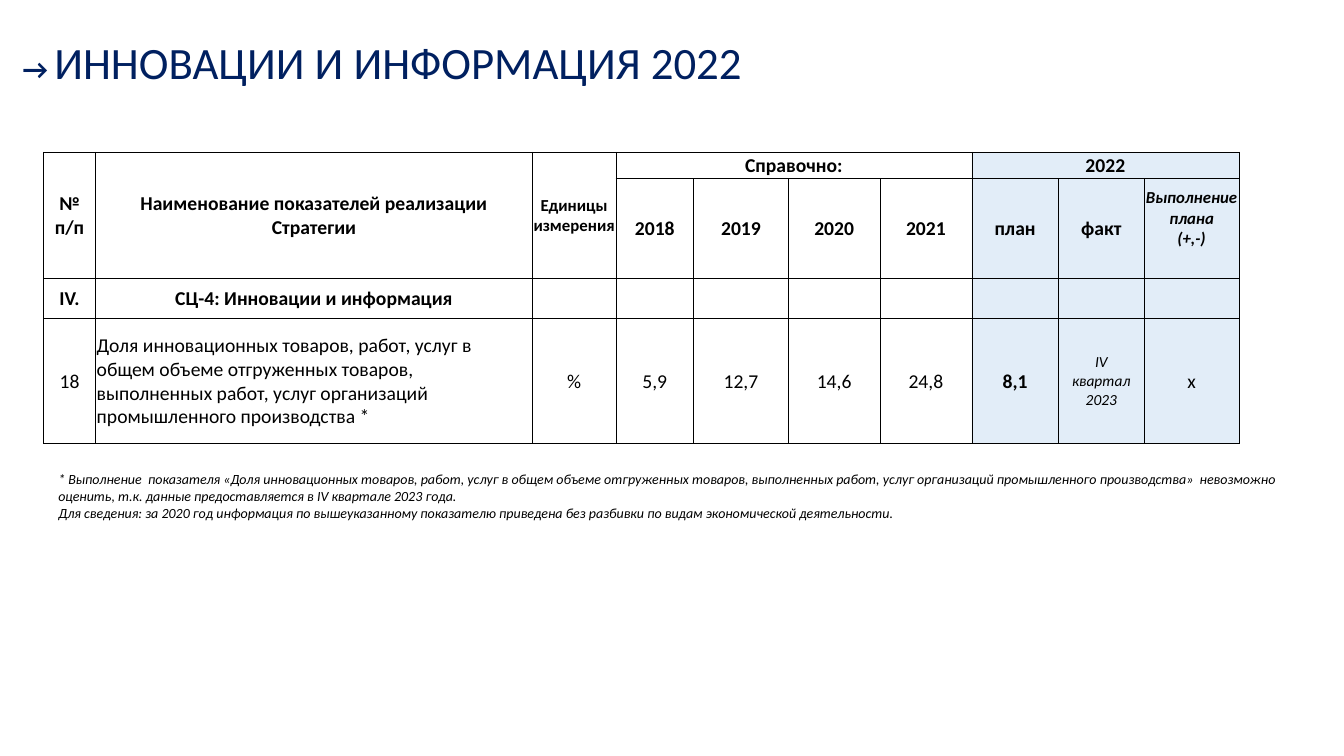
from lxml import etree
from pptx import Presentation
from pptx.dml.color import RGBColor
from pptx.enum.text import MSO_ANCHOR, MSO_AUTO_SIZE, PP_ALIGN
from pptx.oxml.ns import qn
from pptx.util import Inches, Pt

CENTER, LEFT = PP_ALIGN.CENTER, PP_ALIGN.LEFT
MIDDLE = MSO_ANCHOR.MIDDLE
FIT_SHAPE = MSO_AUTO_SIZE.SHAPE_TO_FIT_TEXT
TITLE_ONLY = 5
FONT = "Calibri"
COLORS = {"navy": "002060", "black": "000000", "white": "FFFFFF", "pale": "DEEBF7"}
PLAIN_STYLE = "{2D5ABB26-0587-4C30-8999-92F81FD0307C}"

COLUMN_WIDTHS = [0.52, 4.33, 0.83, 0.77, 0.94, 0.91, 0.91, 0.86, 0.85, 0.94]
ROW_HEIGHTS = [0.26, 0.99, 0.4, 1.24]
FIRST_CURRENT_COLUMN = 7
MERGES = [(0, 0, 1, 0), (0, 1, 1, 1), (0, 2, 1, 2), (0, 3, 0, 6), (0, 7, 0, 9)]
ROWS = [
    ["№ п/п", "Наименование показателей реализации Стратегии",
     "Единицы измерения", "Справочно:", "", "", "", "2022", "", ""],
    ["", "", "", "2018", "2019", "2020", "2021", "план", "факт",
     "Выполнение плана\n(+,-)"],
    ["IV.", "СЦ-4: Инновации и информация"] + [""] * 8,
    ["18",
     "Доля инновационных товаров, работ, услуг в общем объеме отгруженных товаров, "
     "выполненных работ, услуг организаций промышленного производства *",
     "%", "5,9", "12,7", "14,6", "24,8", "8,1", "IV\nквартал\n2023", "х"],
]
CELL_FORMATS = {
    (0, 2): {"size": 12},
    (1, 9): {"size": 12, "italic": True},
    (3, 1): {"align": LEFT},
    (3, 7): {"bold": True},
    (3, 8): {"size": 11, "italic": True},
}
FOOTNOTE = (
    "* Выполнение  показателя «Доля инновационных товаров, работ, услуг в общем объеме "
    "отгруженных товаров, выполненных работ, услуг организаций промышленного "
    "производства»  невозможно оценить, т.к. данные предоставляется в IV квартале 2023 "
    "года.\nДля сведения: за 2020 год информация по вышеуказанному показателю приведена "
    "без разбивки по видам экономической деятельности."
)


def add_span(para, text, size, color="black", bold=False, italic=False):
    span = para.add_run()
    span.text = text
    font = span.font
    font.name, font.size, font.bold, font.italic = FONT, Pt(size), bold, italic
    font.color.rgb = RGBColor.from_string(COLORS[color])


def write_text(frame, text, align=LEFT, **span_format):
    for index, line in enumerate(text.split("\n")):
        para = frame.add_paragraph() if index else frame.paragraphs[0]
        para.alignment = align
        add_span(para, line, **span_format)


def place(shape, box):
    shape.left, shape.top, shape.width, shape.height = map(Inches, box)


def add_title(slide, box):
    title = slide.shapes.title
    place(title, box)
    frame = title.text_frame
    frame.word_wrap = False
    frame.auto_size = FIT_SHAPE
    frame.vertical_anchor = MSO_ANCHOR.TOP
    write_text(frame, "→ ", align=CENTER, size=20, color="navy", bold=True)
    add_span(frame.paragraphs[0], "ИННОВАЦИИ И ИНФОРМАЦИЯ 2022", 32, "navy")


def add_borders(cell):
    properties = cell._tc.get_or_add_tcPr()
    for side in ("a:lnL", "a:lnR", "a:lnT", "a:lnB"):
        line = etree.SubElement(properties, qn(side), w=str(Pt(0.5)))
        fill = etree.SubElement(line, qn("a:solidFill"))
        etree.SubElement(fill, qn("a:srgbClr"), val=COLORS["black"])


def fill_cell(cell, color, opacity=100):
    cell.fill.solid()
    cell.fill.fore_color.rgb = RGBColor.from_string(COLORS[color])
    if opacity < 100:
        tint = cell._tc.tcPr.find(".//" + qn("a:solidFill") + "[last()]/" + qn("a:srgbClr"))
        tint = cell._tc.tcPr.findall(qn("a:solidFill"))[0][0]
        etree.SubElement(tint, qn("a:alpha"), val=str(opacity * 1000))


def format_cell(cell, row, column, text):
    cell.vertical_anchor = MIDDLE
    cell.margin_left = cell.margin_right = cell.margin_top = Inches(0.01)
    # The last heading sits a little above the middle of its cell.
    cell.margin_bottom = Inches(0.2 if (row, column) == (1, 9) else 0)
    add_borders(cell)
    if column >= FIRST_CURRENT_COLUMN:
        fill_cell(cell, "pale", opacity=85)
    else:
        fill_cell(cell, "white")
    if text:
        defaults = {"size": 14, "bold": row < 3, "align": CENTER}
        write_text(cell.text_frame, text,
                   **{**defaults, **CELL_FORMATS.get((row, column), {})})
    else:
        cell.text_frame.paragraphs[0].font.size = Pt(14)


def add_indicator_table(slide, box):
    shape = slide.shapes.add_table(len(ROWS), len(COLUMN_WIDTHS), *map(Inches, box))
    table = shape.table
    table.first_row = table.horz_banding = False
    shape._element.find(".//" + qn("a:tableStyleId")).text = PLAIN_STYLE
    for column, width in zip(table.columns, COLUMN_WIDTHS):
        column.width = Inches(width)
    for row, height in zip(table.rows, ROW_HEIGHTS):
        row.height = Inches(height)
    for row, texts in enumerate(ROWS):
        for column, text in enumerate(texts):
            format_cell(table.cell(row, column), row, column, text)
    for top, left, bottom, right in MERGES:
        table.cell(top, left).merge(table.cell(bottom, right))


def add_footnote(slide, box):
    frame = slide.shapes.add_textbox(*map(Inches, box)).text_frame
    frame.word_wrap = True
    frame.auto_size = FIT_SHAPE
    write_text(frame, FOOTNOTE, size=10, italic=True)


def main():
    deck = Presentation()
    deck.slide_width, deck.slide_height = Inches(13.33), Inches(7.5)
    page = deck.slides.add_slide(deck.slide_layouts[TITLE_ONLY])
    add_title(page, (0.09, 0.29, 7.41, 0.64))
    add_indicator_table(page, (0.43, 1.51, sum(COLUMN_WIDTHS), sum(ROW_HEIGHTS)))
    add_footnote(page, (0.48, 4.62, 12.36, 0.77))
    deck.save("out.pptx")


if __name__ == "__main__":
    main()
